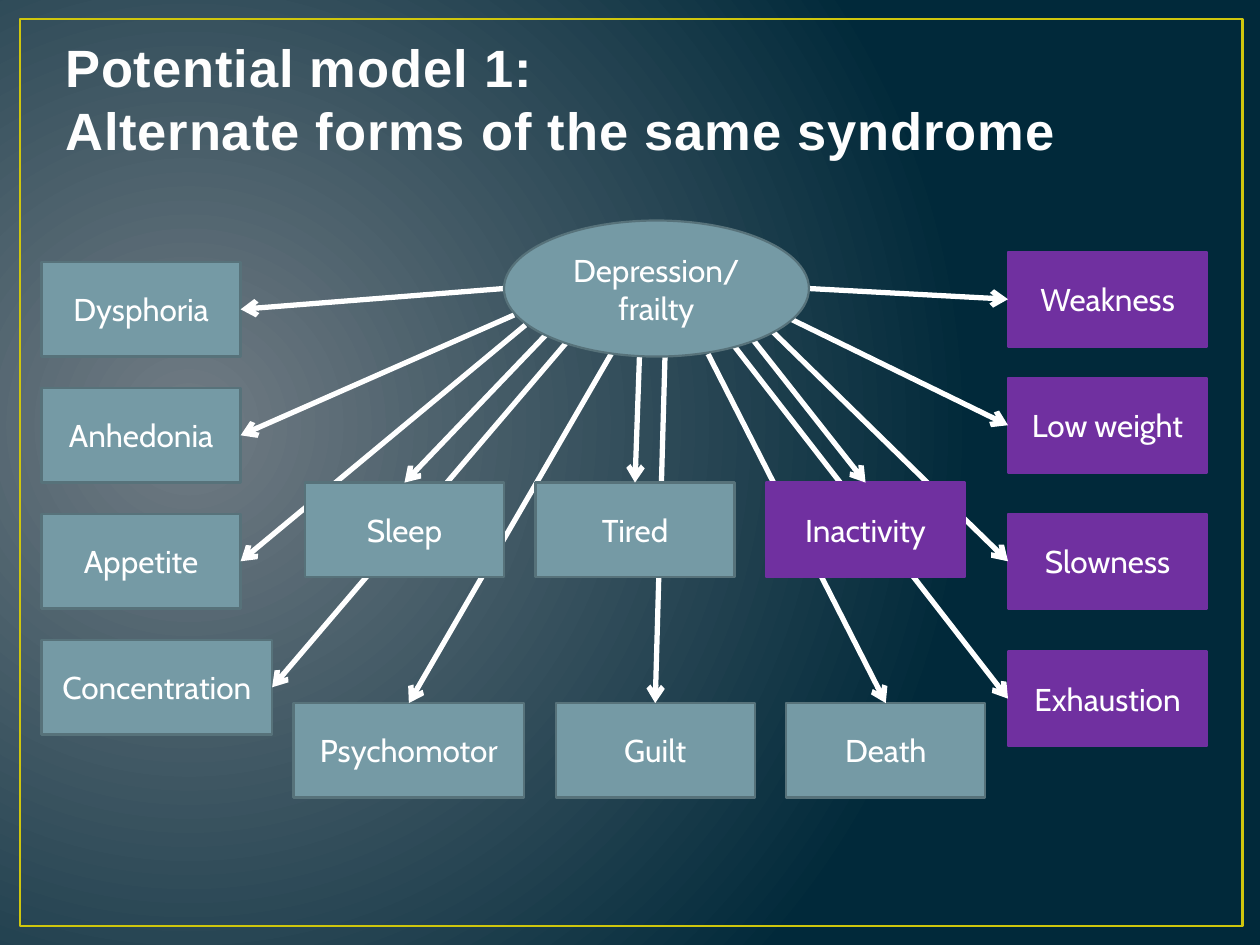
from lxml.etree import SubElement
from pptx import Presentation
from pptx.dml.color import RGBColor
from pptx.enum.dml import MSO_THEME_COLOR
from pptx.enum.shapes import MSO_CONNECTOR, MSO_SHAPE
from pptx.enum.text import MSO_ANCHOR, PP_ALIGN
from pptx.oxml import parse_xml
from pptx.oxml.ns import nsdecls, qn
from pptx.util import Inches, Pt

WHITE = RGBColor(0xFF, 0xFF, 0xFF)
TITLE_WHITE = RGBColor(0xFE, 0xFE, 0xFE)
TEAL = RGBColor(0x75, 0x9A, 0xA5)
TEAL_EDGE = RGBColor(0x57, 0x72, 0x7A)
PURPLE = RGBColor(0x70, 0x30, 0xA0)
GOLD = RGBColor(0xCF, 0xC6, 0x0D)
GLOW, NIGHT = "717C84", "01293A"

TITLE = "Potential model 1:\vAlternate forms of the same syndrome"
SYNDROME = "Depression/ frailty"
BOX_W, WIDE_W, BOX_H, GAP = 1.58, 1.83, 0.75, 0.25
TOP, LEFT, RIGHT = 0, 1, 3  # connection sites of a rectangle

# (symptom, width, colour, where its arrow leaves the ellipse)
DEPRESSION_COLUMN = [
    ("Dysphoria", BOX_W, TEAL, (4, 2.29)),
    ("Anhedonia", BOX_W, TEAL, (4.08, 2.5)),
    ("Appetite", BOX_W, TEAL, (4.17, 2.58)),
    ("Concentration", WIDE_W, TEAL, (4.58, 2.62)),
]
FRAILTY_COLUMN = [
    ("Weakness", BOX_W, PURPLE, (6.42, 2.29)),
    ("Low weight", BOX_W, PURPLE, (6.25, 2.52)),
    ("Slowness", BOX_W, PURPLE, (6.12, 2.62)),
    ("Exhaustion", BOX_W, PURPLE, (5.83, 2.75)),
]
BOTTOM_ROW = [
    ("Psychomotor", WIDE_W, TEAL, (4.92, 2.69)),
    ("Guilt", BOX_W, TEAL, (5.28, 2.75)),
    ("Death", BOX_W, TEAL, (5.62, 2.81)),
]
MIDDLE_ROW = [
    ("Sleep", BOX_W, TEAL, (4.34, 2.65)),
    ("Tired", BOX_W, TEAL, (5.08, 2.69)),
    ("Inactivity", BOX_W, PURPLE, (5.9, 2.6)),
]
LEFT_TOPS = [2.08 + i for i in range(4)]
RIGHT_TOPS = [2, 3, 4.08, 5.17]


def paint_background(slide):
    """Circular gradient centred near the left edge."""
    fill = slide.background.fill
    fill.solid()
    fill.fore_color.theme_color = MSO_THEME_COLOR.DARK_1
    bg_pr = slide.background._cSld.bg.bgPr
    bg_pr.replace(bg_pr[0], parse_xml(
        f'<a:gradFill {nsdecls("a")} rotWithShape="1"><a:gsLst>'
        f'<a:gs pos="0"><a:srgbClr val="{GLOW}"/></a:gs>'
        f'<a:gs pos="100000"><a:srgbClr val="{NIGHT}"/></a:gs></a:gsLst>'
        '<a:path path="circle">'
        '<a:fillToRect l="15000" t="50000" r="85000" b="60000"/>'
        '</a:path></a:gradFill>'))


def add_node(slide, kind, text, box, color):
    s = slide.shapes.add_shape(kind, *map(Inches, box))
    s.shadow.inherit = False
    s.fill.solid()
    s.fill.fore_color.rgb = color
    s.line.color.rgb = TEAL_EDGE if color == TEAL else color
    s.line.width = Pt(1.25)
    tf = s.text_frame
    tf.word_wrap = True
    tf.vertical_anchor = MSO_ANCHOR.MIDDLE
    p = tf.paragraphs[0]
    p.text = text
    p.alignment = PP_ALIGN.CENTER
    p.font.name, p.font.size = "Cabin", Pt(18)
    p.font.color.rgb = WHITE
    return s


def add_arrow(slide, start, node, site):
    x, y = map(Inches, start)
    c = slide.shapes.add_connector(MSO_CONNECTOR.STRAIGHT, x, y, x, y)
    c.end_connect(node, site)
    c.line.color.rgb = WHITE
    c.line.width = Pt(3)
    SubElement(c.line._get_or_add_ln(), qn("a:tailEnd"), type="arrow")
    SubElement(c._element.spPr, qn("a:effectLst"))


def add_symptoms(slide, symptoms, corners, site):
    """Boxes first, then their arrows, so that arrows lie on top."""
    nodes = [add_node(slide, MSO_SHAPE.RECTANGLE, text, (x, y, w, BOX_H), color)
             for (text, w, color, _), (x, y) in zip(symptoms, corners)]
    for node, (*_, start) in zip(nodes, symptoms):
        add_arrow(slide, start, node, site)


def row_corners(symptoms, x, y):
    corners = []
    for _, w, *_ in symptoms:
        corners.append((x, y))
        x += w + GAP
    return corners


def add_title(slide):
    s = slide.shapes.add_textbox(*map(Inches, (0.42, 0.08, 9, 1.25)))
    tf = s.text_frame
    tf.word_wrap = True
    tf.vertical_anchor = MSO_ANCHOR.BOTTOM
    p = tf.paragraphs[0]
    p.text = TITLE
    p.font.name, p.font.size, p.font.bold = "Arial", Pt(30), True
    p.font.color.rgb = TITLE_WHITE
    for r in p.runs:
        r.font._element.set("spc", "50")


def main():
    prs = Presentation()
    prs.slide_width, prs.slide_height = Inches(10), Inches(7.5)
    slide = prs.slides.add_slide(prs.slide_layouts[6])
    paint_background(slide)

    frame = slide.shapes.add_shape(
        MSO_SHAPE.RECTANGLE, *map(Inches, (0.16, 0.15, 9.7, 7.2)))
    frame.shadow.inherit = False
    frame.fill.background()
    frame.line.color.rgb = GOLD
    frame.line.width = Pt(1.5)
    add_title(slide)

    add_symptoms(slide, DEPRESSION_COLUMN, [(0.33, y) for y in LEFT_TOPS], RIGHT)
    add_symptoms(slide, FRAILTY_COLUMN, [(8, y) for y in RIGHT_TOPS], LEFT)
    add_symptoms(slide, BOTTOM_ROW, row_corners(BOTTOM_ROW, 2.33, 5.58), TOP)
    add_symptoms(slide, MIDDLE_ROW, row_corners(MIDDLE_ROW, 2.42, 3.83), TOP)
    add_node(slide, MSO_SHAPE.OVAL, SYNDROME, (4, 1.75, 2.42, 1.08), TEAL)
    prs.save("out.pptx")


if __name__ == "__main__":
    main()
